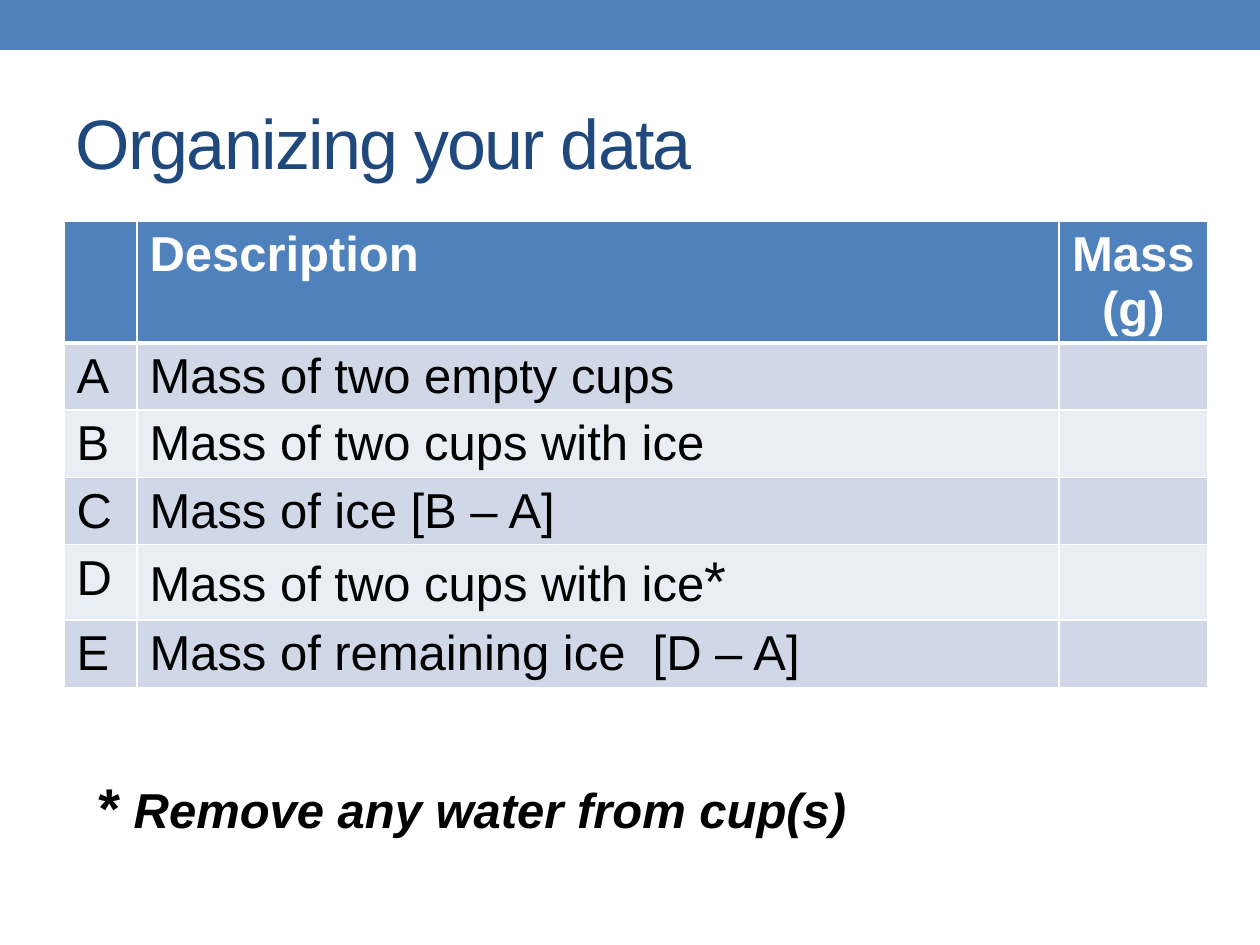
from dataclasses import dataclass

from lxml.etree import SubElement
from pptx import Presentation
from pptx.dml.color import RGBColor
from pptx.enum.shapes import MSO_SHAPE
from pptx.enum.text import MSO_ANCHOR, PP_ALIGN
from pptx.oxml.ns import qn
from pptx.util import Emu, Pt

PX = 914400 // 126
FONT = "Arial"
BLUE = RGBColor(0x4F, 0x81, 0xBD)
NAVY = RGBColor(0x1F, 0x49, 0x7D)
BAND_DARK = RGBColor(0xD0, 0xD8, 0xE8)
BAND_LIGHT = RGBColor(0xE9, 0xED, 0xF4)
WHITE = RGBColor(0xFF, 0xFF, 0xFF)
BLACK = RGBColor(0, 0, 0)

COLUMN_WIDTHS = (73, 922, 149)
HEADINGS = ("", "Description", "Mass (g)")
HEADER_HEIGHT = 121


@dataclass(frozen=True)
class Measurement:
    letter: str
    description: str
    mark: str = ""
    height: int = 67


MEASUREMENTS = (
    Measurement("A", "Mass of two empty cups"),
    Measurement("B", "Mass of two cups with ice"),
    Measurement("C", "Mass of ice [B – A]"),
    Measurement("D", "Mass of two cups with ice", mark="*", height=75),
    Measurement("E", "Mass of remaining ice  [D – A]"),
)


def px(*lengths: int) -> list[Emu]:
    return [Emu(length * PX) for length in lengths]


def style(paragraph, size: int, color: RGBColor, bold=False, italic=False) -> None:
    font = paragraph.font
    font.name, font.size = FONT, Pt(size)
    font.bold, font.italic = bold, italic
    font.color.rgb = color


def add_run(paragraph, text: str, size: int | None = None) -> None:
    run = paragraph.add_run()
    run.text = text
    if size:
        run.font.size = Pt(size)


def set_borders(cell, bottom: int = 1, top: int = 1) -> None:
    """Draw white cell edges; widths are in points."""
    properties = cell._tc.get_or_add_tcPr()
    widths = {"a:lnL": 1, "a:lnR": 1, "a:lnT": top, "a:lnB": bottom}
    for edge, width in widths.items():
        line = SubElement(properties, qn(edge), w=str(Pt(width)))
        fill = SubElement(line, qn("a:solidFill"))
        SubElement(fill, qn("a:srgbClr"), val=str(WHITE))


def add_bar(slide) -> None:
    bar = slide.shapes.add_shape(MSO_SHAPE.RECTANGLE, *px(0, 0, 1260, 50))
    bar.shadow.inherit = False
    bar.fill.solid()
    bar.fill.fore_color.rgb = BLUE
    bar.line.fill.background()


def set_title(slide, text: str) -> None:
    title = slide.shapes.title
    title.left, title.top, title.width, title.height = px(63, 73, 1134, 136)
    frame = title.text_frame
    frame.vertical_anchor = MSO_ANCHOR.MIDDLE
    heading = frame.paragraphs[0]
    heading.alignment = PP_ALIGN.LEFT
    style(heading, 40, NAVY)
    add_run(heading, text)
    heading.runs[0].font._element.set("spc", "-100")


def add_data_table(slide) -> None:
    heights = (HEADER_HEIGHT, *(m.height for m in MEASUREMENTS))
    table = slide.shapes.add_table(
        len(heights), len(COLUMN_WIDTHS),
        *px(64, 221, sum(COLUMN_WIDTHS), sum(heights)),
    ).table
    for column, width in zip(table.columns, px(*COLUMN_WIDTHS)):
        column.width = width
    for row, height in zip(table.rows, px(*heights)):
        row.height = height

    for column, heading in enumerate(HEADINGS):
        cell = table.cell(0, column)
        set_borders(cell, bottom=3)
        cell.fill.solid()
        cell.fill.fore_color.rgb = BLUE
        paragraph = cell.text_frame.paragraphs[0]
        style(paragraph, 28, WHITE, bold=True)
        if heading:
            add_run(paragraph, heading)
    table.cell(0, 2).text_frame.paragraphs[0].alignment = PP_ALIGN.CENTER

    for row, measurement in enumerate(MEASUREMENTS, start=1):
        for column, text in enumerate((measurement.letter, measurement.description, "")):
            cell = table.cell(row, column)
            set_borders(cell, top=3 if row == 1 else 1)
            cell.fill.solid()
            cell.fill.fore_color.rgb = BAND_DARK if row % 2 else BAND_LIGHT
            paragraph = cell.text_frame.paragraphs[0]
            style(paragraph, 28, BLACK)
            if text:
                add_run(paragraph, text)
        if measurement.mark:
            add_run(table.cell(row, 1).text_frame.paragraphs[0], measurement.mark, 32)


def add_footnote(slide) -> None:
    frame = slide.shapes.add_textbox(*px(84, 766, 1061, 81)).text_frame
    frame.word_wrap = True
    footnote = frame.paragraphs[0]
    style(footnote, 28, BLACK, bold=True, italic=True)
    add_run(footnote, "* ", 32)
    add_run(footnote, "Remove any water from cup(s)")


def main() -> None:
    presentation = Presentation()
    presentation.slide_width, presentation.slide_height = px(1260, 945)
    slide = presentation.slides.add_slide(presentation.slide_layouts[5])
    add_bar(slide)
    set_title(slide, "Organizing your data")
    add_data_table(slide)
    add_footnote(slide)
    presentation.save("out.pptx")


if __name__ == "__main__":
    main()
